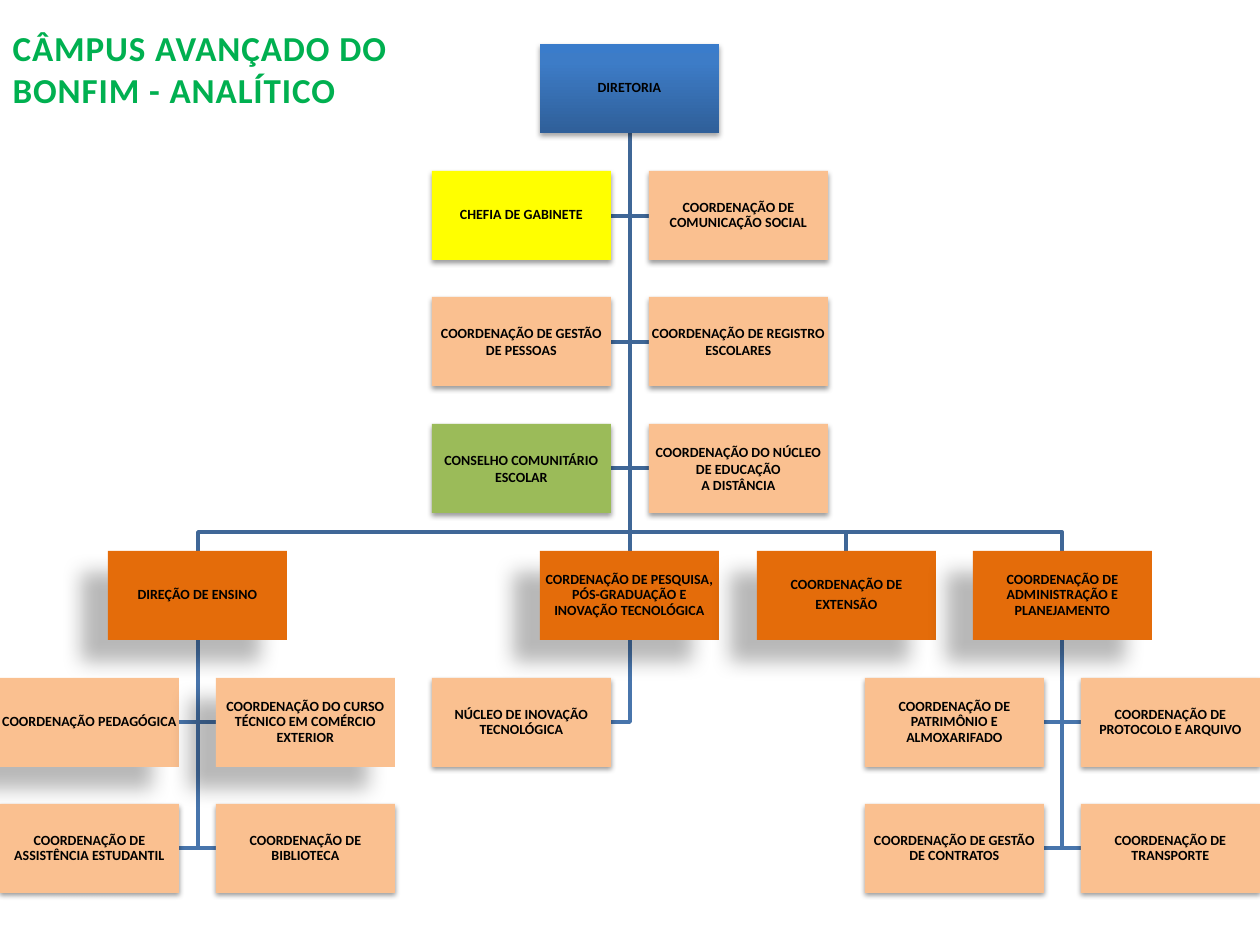
from copy import deepcopy
from lxml.etree import SubElement
from pptx import Presentation
from pptx.dml.color import RGBColor
from pptx.enum.shapes import MSO_CONNECTOR as LINE, MSO_SHAPE as SHAPE
from pptx.enum.text import MSO_ANCHOR as ANCHOR, MSO_AUTO_SIZE as AUTO, PP_ALIGN as ALIGN
from pptx.oxml.ns import qn
from pptx.util import Pt

# Content: (column, row, fill, shadow, text); staff sit beside a trunk, areas below it
TITLE = "CÂMPUS AVANÇADO DO BONFIM - ANALÍTICO"
HEAD = (5, 0, "blue", "top", "DIRETORIA")
STAFF = [
    (4, 1, "yellow", "near", "CHEFIA DE GABINETE"),
    (6, 1, "peach", "near", "COORDENAÇÃO DE COMUNICAÇÃO SOCIAL"),
    (4, 2, "peach", "near", "COORDENAÇÃO DE GESTÃO DE PESSOAS"),
    (6, 2, "peach", "near", "COORDENAÇÃO DE REGISTRO ESCOLARES"),
    (4, 3, "green", "near", "CONSELHO COMUNITÁRIO ESCOLAR"),
    (6, 3, "peach", "near", "COORDENAÇÃO DO NÚCLEO DE EDUCAÇÃO\nA DISTÂNCIA"),
]
AREAS = [
    ((1, 4, "orange", "far", "DIREÇÃO DE ENSINO"), [
        (0, 5, "peach", "far", "COORDENAÇÃO PEDAGÓGICA"),
        (2, 5, "peach", "far", "COORDENAÇÃO DO CURSO TÉCNICO EM COMÉRCIO EXTERIOR"),
        (0, 6, "peach", "near", "COORDENAÇÃO DE ASSISTÊNCIA ESTUDANTIL"),
        (2, 6, "peach", "near", "COORDENAÇÃO DE BIBLIOTECA"),
    ]),
    ((5, 4, "orange", "far",
      "CORDENAÇÃO DE PESQUISA, PÓS-GRADUAÇÃO E INOVAÇÃO TECNOLÓGICA"), [
        (4, 5, "peach", "near", "NÚCLEO DE INOVAÇÃO TECNOLÓGICA"),
    ]),
    ((7, 4, "orange", "far", "COORDENAÇÃO DE\nEXTENSÃO"), []),
    ((9, 4, "orange", "far", "COORDENAÇÃO DE ADMINISTRAÇÃO E PLANEJAMENTO"), [
        (8, 5, "peach", "near", "COORDENAÇÃO DE PATRIMÔNIO E ALMOXARIFADO"),
        (10, 5, "peach", "near", "COORDENAÇÃO DE PROTOCOLO E ARQUIVO"),
        (8, 6, "peach", "near", "COORDENAÇÃO DE GESTÃO DE CONTRATOS"),
        (10, 6, "peach", "near", "COORDENAÇÃO DE TRANSPORTE"),
    ]),
]
COLORS = {
    "title": "00B050", "text": "000000", "trunk": "3F6797", "branch": "4875AC",
    "peach": "FAC090", "orange": "E46C0A", "yellow": "FFFF00", "green": "9BBB59",
}
BLEND = [(0, "2F5F99"), (0.8, "3D7CC7"), (1, "3A7CCB")]
# Shadow: opacity %, blur pt, distance pt, angle
SHADOWS = {"top": (35, 3.1, 1.8, 90), "near": (38, 3.1, 1.6, 90), "far": (28, 11.8, 19.7, 141)}
FONT = "Calibri"

# Grid in px
PX = 914400 // 126
WIDE, HIGH = 179, 89
STEP_X, STEP_Y, TOP = 108.1, 126.7, 44
BUS = 19  # from the bus down to the area boxes


def px(*nums):
    return [round(n) * PX for n in nums]


def rgb(name):
    return RGBColor.from_string(COLORS.get(name, name))


def corner(box):
    return round(box[0] * STEP_X), round(TOP + box[1] * STEP_Y)


prs = Presentation()
prs.slide_width, prs.slide_height = px(1260, 945)
slide = prs.slides.add_slide(prs.slide_layouts[5])
shapes = slide.shapes


def style(font, size, color):
    font.name, font.size, font.bold = FONT, Pt(size), True
    font.color.rgb = rgb(color)


def draw_line(points, color):
    pts = [tuple(px(*p)) for p in points]
    if len(pts) == 2:
        line = shapes.add_connector(LINE.STRAIGHT, *pts[0], *pts[1])
        SubElement(line._element.spPr, qn("a:effectLst"))
    else:
        pen = shapes.build_freeform(*pts[0])
        pen.add_line_segments(pts[1:], close=False)
        line = pen.convert_to_shape()
        line.fill.background()
        line.shadow.inherit = False
    line.line.color.rgb = rgb(color)
    line.line.width = Pt(2)


def link(boss, unit, color):
    x, y = corner(boss)
    left, top = corner(unit)
    start, end = x + WIDE / 2, left + WIDE / 2
    points = [(start, y + HIGH)]
    if abs(unit[0] - boss[0]) == 1:
        mid = top + HIGH / 2
        points += [(start, mid), (left + WIDE if left < x else left, mid)]
    else:
        if unit[0] != boss[0]:
            points += [(start, top - BUS), (end, top - BUS)]
        points.append((end, top))
    draw_line(points, color)


def add_shadow(box, kind):
    alpha, blur, dist, angle = SHADOWS[kind]
    box.shadow.inherit = False
    effects = box._element.spPr.find(qn("a:effectLst"))
    outer = SubElement(effects, qn("a:outerShdw"), blurRad=str(Pt(blur)), dist=str(Pt(dist)),
                       dir=str(angle * 60000), algn="ctr", rotWithShape="0")
    tone = SubElement(outer, qn("a:srgbClr"), val="000000")
    SubElement(tone, qn("a:alpha"), val=str(alpha * 1000))


def add_blend(fill, spPr):
    fill.gradient()
    fill.gradient_angle = 90
    stops = spPr.find(".//" + qn("a:gsLst"))
    stops.append(deepcopy(stops[0]))
    for stop, (pos, color) in zip(fill.gradient_stops, BLEND):
        stop.position = pos
        stop.color.rgb = rgb(color)


def draw_box(unit):
    col, row, fill, shadow, text = unit
    box = shapes.add_shape(SHAPE.RECTANGLE, *px(*corner(unit), WIDE, HIGH))
    if fill == "blue":
        add_blend(box.fill, box._element.spPr)
    else:
        box.fill.solid()
        box.fill.fore_color.rgb = rgb(fill)
    box.line.fill.background()
    add_shadow(box, shadow)
    frame = box.text_frame
    frame.margin_left = frame.margin_right = frame.margin_top = frame.margin_bottom = PX
    frame.word_wrap = True
    frame.vertical_anchor = ANCHOR.MIDDLE
    frame.text = text
    for para in frame.paragraphs:
        para.alignment = ALIGN.CENTER
        if row not in (2, 3):
            para.line_spacing, para.space_after = 0.9, Pt(2.8)
        style(para.runs[0].font, 8, "text")


# Title
title = shapes.title
title.left, title.top, title.width, title.height = px(0, 20, 490, 97)
frame = title.text_frame
frame.text = TITLE
frame.word_wrap, frame.auto_size = True, AUTO.NONE
frame.vertical_anchor = ANCHOR.TOP
frame.paragraphs[0].alignment = ALIGN.LEFT
run = frame.paragraphs[0].runs[0]
style(run.font, 20, "title")
run.font._element.set("spc", "50")

# Lines, then boxes over them
for unit in STAFF + [area for area, team in AREAS]:
    link(HEAD, unit, "trunk")
for area, team in AREAS:
    for unit in team:
        link(area, unit, "branch")

draw_box(HEAD)
for area, team in AREAS:
    for unit in [area] + team:
        draw_box(unit)
for unit in STAFF:
    draw_box(unit)

prs.save("out.pptx")
